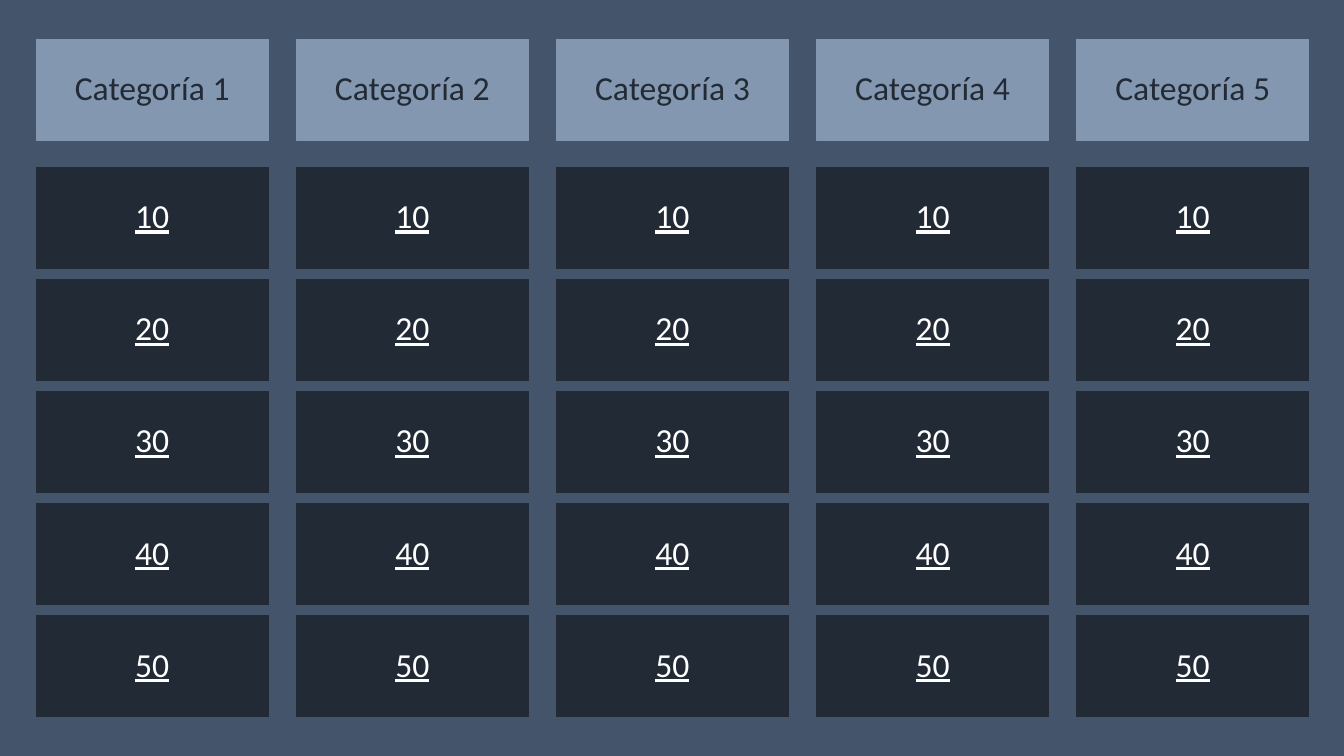
"""Build a quiz board with five categories and five point values each."""
import pptx
import pptx.util
import pptx.dml.color
import pptx.enum.shapes
import pptx.enum.text

Inches = pptx.util.Inches
Pt = pptx.util.Pt
RGBColor = pptx.dml.color.RGBColor

SLATE = RGBColor(0x44, 0x54, 0x6A)
STEEL = RGBColor(0x84, 0x97, 0xB0)
NAVY = RGBColor(0x22, 0x2A, 0x35)
WHITE = RGBColor(0xFF, 0xFF, 0xFF)

LEFT, HEAD_TOP = 0.36, 0.39
FIRST_TOP, LAST_TOP = 1.66, 6.11
WIDTH, HEIGHT = 2.3, 1
COLUMN_STEP = 2.58
POINTS = [10, 20, 30, 40, 50]
ROW_STEP = (LAST_TOP - FIRST_TOP) / (len(POINTS) - 1)

deck = pptx.Presentation()
deck.slide_width = Inches(13.33)
deck.slide_height = Inches(7.5)
slide = deck.slides.add_slide(deck.slide_layouts[6])
slide.background.fill.solid()
slide.background.fill.fore_color.rgb = SLATE


def add_tile(left, top, text, fill, color, underline):
    tile = slide.shapes.add_shape(
        pptx.enum.shapes.MSO_SHAPE.RECTANGLE,
        Inches(left), Inches(top), Inches(WIDTH), Inches(HEIGHT))
    tile.shadow.inherit = False
    tile.fill.solid()
    tile.fill.fore_color.rgb = fill
    tile.line.color.rgb = fill
    tile.line.width = Pt(0.75)
    frame = tile.text_frame
    frame.word_wrap = True
    frame.vertical_anchor = pptx.enum.text.MSO_ANCHOR.MIDDLE
    label = frame.paragraphs[0]
    label.text = text
    label.alignment = pptx.enum.text.PP_ALIGN.CENTER
    label.line_spacing = 0.9
    label.font.name = "Calibri"
    label.font.size = Pt(24)
    label.font.color.rgb = color
    label.font.underline = underline


for column in range(5):
    left = LEFT + column * COLUMN_STEP
    add_tile(left, HEAD_TOP, f"Categoría {column + 1}", STEEL, NAVY, False)
    for row, value in enumerate(POINTS):
        add_tile(left, FIRST_TOP + row * ROW_STEP, str(value), NAVY, WHITE, True)

deck.save("out.pptx")
